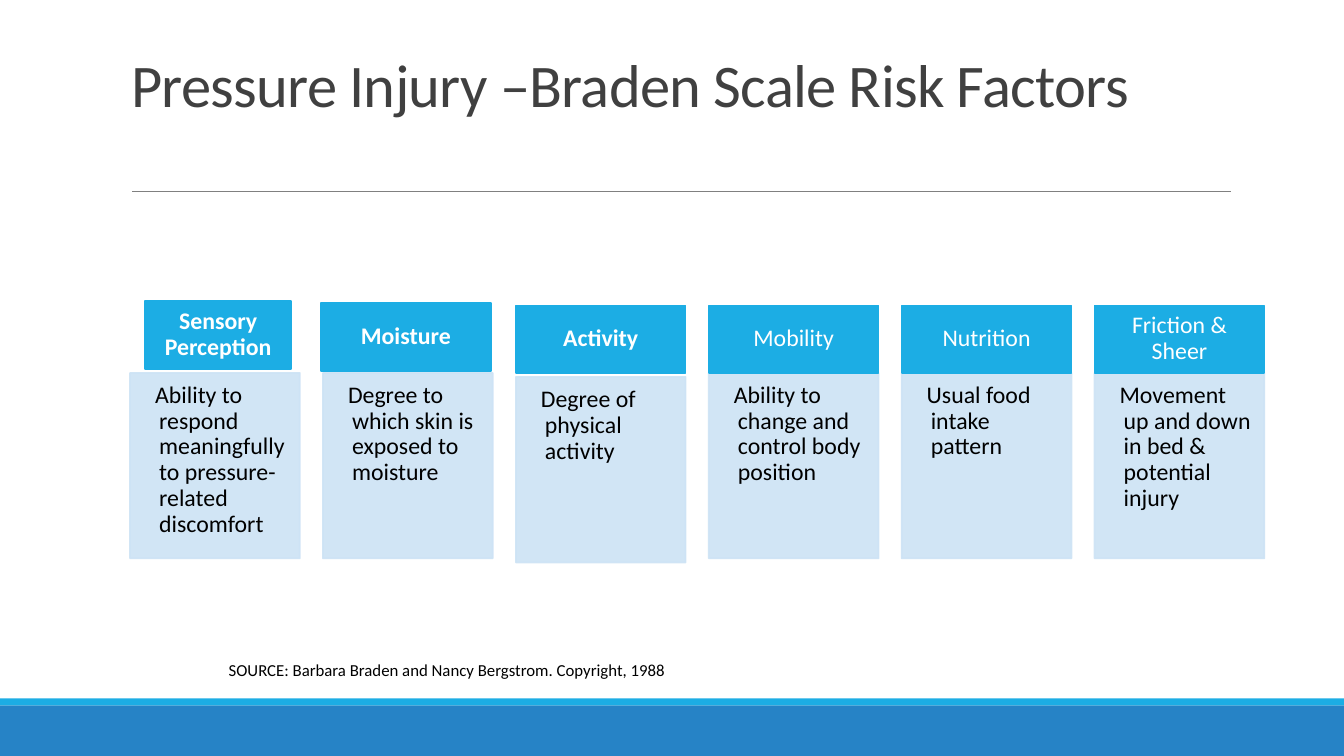
import dataclasses

import lxml.etree
import pptx
import pptx.dml.color
import pptx.enum.shapes
import pptx.enum.text
import pptx.oxml.ns
import pptx.util

RGBColor = pptx.dml.color.RGBColor
Inches = pptx.util.Inches
Pt = pptx.util.Pt
Anchor = pptx.enum.text.MSO_ANCHOR
Align = pptx.enum.text.PP_ALIGN
qn = pptx.oxml.ns.qn

BRIGHT_BLUE = RGBColor(0x1C, 0xAD, 0xE4)
DEEP_BLUE = RGBColor(0x26, 0x83, 0xC6)
PALE_BLUE = RGBColor(0xCD, 0xE3, 0xF5)
TITLE_GRAY = RGBColor(0x40, 0x40, 0x40)
RULE_GRAY = RGBColor(0x80, 0x80, 0x80)
WHITE = RGBColor(0xFF, 0xFF, 0xFF)
BLACK = RGBColor(0, 0, 0)

FONT = "Calibri"
SLIDE_WIDTH, SLIDE_HEIGHT = 13.33, 7.5
HEADER_HEIGHT = 0.67
CARD_SHARE = 0.88


@dataclasses.dataclass
class Factor:
    name: str
    description: str
    bold: bool = False
    header_shift: tuple = (0, 0)
    header_width: float = 1
    body_drop: float = 0


FACTORS = [
    Factor("Sensory Perception",
           "Ability to respond meaningfully to pressure-related discomfort",
           True, (0.15, -0.04), 0.86),
    Factor("Moisture", "Degree to which skin is exposed to moisture",
           True, (-0.02, -0.02)),
    Factor("Activity", "Degree of physical activity", True, body_drop=0.04),
    Factor("Mobility", "Ability to change and control body position"),
    Factor("Nutrition", "Usual food intake pattern"),
    Factor("Friction & Sheer", "Movement up and down in bed & potential injury"),
]


def place(box):
    return [Inches(length) for length in box]


def style_text(paragraph, size, color, bold=False, spacing=1.0):
    paragraph.font.name = FONT
    paragraph.font.size = Pt(size)
    paragraph.font.bold = bold
    paragraph.font.color.rgb = color
    paragraph.line_spacing = spacing


def set_insets(frame, left, top, right, bottom):
    frame.margin_left, frame.margin_top = Inches(left), Inches(top)
    frame.margin_right, frame.margin_bottom = Inches(right), Inches(bottom)


def add_rectangle(slide, box, color, outlined=False):
    shape = slide.shapes.add_shape(
        pptx.enum.shapes.MSO_SHAPE.RECTANGLE, *place(box))
    shape.shadow.inherit = False
    shape.fill.solid()
    shape.fill.fore_color.rgb = color
    if outlined:
        shape.line.color.rgb = color
        shape.line.width = Pt(1.25)
    else:
        shape.line.fill.background()
    return shape


def set_opacity(shape, percent):
    for color in shape._element.spPr.iter(qn("a:srgbClr")):
        lxml.etree.SubElement(color, qn("a:alpha"), val=str(percent * 1000))


def add_title(slide, box):
    title = slide.shapes.title
    title.left, title.top, title.width, title.height = place(box)
    frame = title.text_frame
    frame.text = "Pressure Injury –Braden Scale Risk Factors"
    frame.word_wrap = True
    frame.auto_size = pptx.enum.text.MSO_AUTO_SIZE.NONE
    frame.vertical_anchor = Anchor.BOTTOM
    paragraph = frame.paragraphs[0]
    paragraph.alignment = Align.LEFT
    style_text(paragraph, 43.2, TITLE_GRAY, spacing=0.85)
    paragraph.runs[0]._r.get_or_add_rPr().set("spc", "-50")


def add_rule(slide, left, right, top):
    rule = slide.shapes.add_connector(
        pptx.enum.shapes.MSO_CONNECTOR.STRAIGHT,
        *place((left, top, right, top)))
    rule.line.color.rgb = RULE_GRAY
    rule.line.width = Pt(0.5)
    lxml.etree.SubElement(rule._element.spPr, qn("a:effectLst"))


def add_footer_bands(slide, box):
    left, top, width, height = box
    stripe = height * 0.12
    add_rectangle(slide, (left, top + stripe, width, height - stripe), DEEP_BLUE)
    add_rectangle(slide, (left, top, width, stripe), BRIGHT_BLUE)


def add_factor(slide, factor, box):
    left, top, width, height = box
    shift_x, shift_y = factor.header_shift
    body = add_rectangle(
        slide,
        (left, top + HEADER_HEIGHT + factor.body_drop, width, height - HEADER_HEIGHT),
        PALE_BLUE, outlined=True)
    set_opacity(body, 90)
    frame = body.text_frame
    frame.text = factor.description
    frame.word_wrap = True
    frame.vertical_anchor = Anchor.TOP
    set_insets(frame, 0.1, 0.1, 0.12, 0.15)
    paragraph = frame.paragraphs[0]
    paragraph.alignment = Align.LEFT
    style_text(paragraph, 17, BLACK, spacing=0.9)
    properties = paragraph._p.get_or_add_pPr()
    properties.set("marL", str(Inches(0.19)))
    properties.set("indent", str(Inches(-0.04)))

    header = add_rectangle(
        slide,
        (left + shift_x, top + shift_y, width * factor.header_width, HEADER_HEIGHT),
        BRIGHT_BLUE, outlined=True)
    frame = header.text_frame
    frame.text = factor.name
    frame.word_wrap = True
    frame.vertical_anchor = Anchor.MIDDLE
    set_insets(frame, 0.13, 0.08, 0.13, 0.08)
    paragraph = frame.paragraphs[0]
    paragraph.alignment = Align.CENTER
    style_text(paragraph, 17, WHITE, factor.bold, 0.9)


def add_factor_row(slide, box):
    left, top, width, height = box
    column = width / (len(FACTORS) - 1 + CARD_SHARE)
    for index, factor in enumerate(FACTORS):
        add_factor(slide, factor,
                   (left + index * column, top, column * CARD_SHARE, height))


def add_source(slide, box):
    frame = slide.shapes.add_textbox(*place(box)).text_frame
    frame.text = "SOURCE: Barbara Braden and Nancy Bergstrom. Copyright, 1988"
    frame.word_wrap = True
    style_text(frame.paragraphs[0], 12, BLACK)


def main():
    presentation = pptx.Presentation()
    presentation.slide_width = Inches(SLIDE_WIDTH)
    presentation.slide_height = Inches(SLIDE_HEIGHT)
    slide = presentation.slides.add_slide(presentation.slide_layouts[5])
    add_footer_bands(slide, (0, 6.93, SLIDE_WIDTH, 0.57))
    add_rule(slide, 1.31, 12.21, 1.9)
    add_title(slide, (1.2, 0.31, 11, 0.93))
    add_factor_row(slide, (1.29, 3.03, 11.25, 2.51))
    add_source(slide, (2.17, 6.5, 9.06, 0.3))
    presentation.save("out.pptx")


if __name__ == "__main__":
    main()
